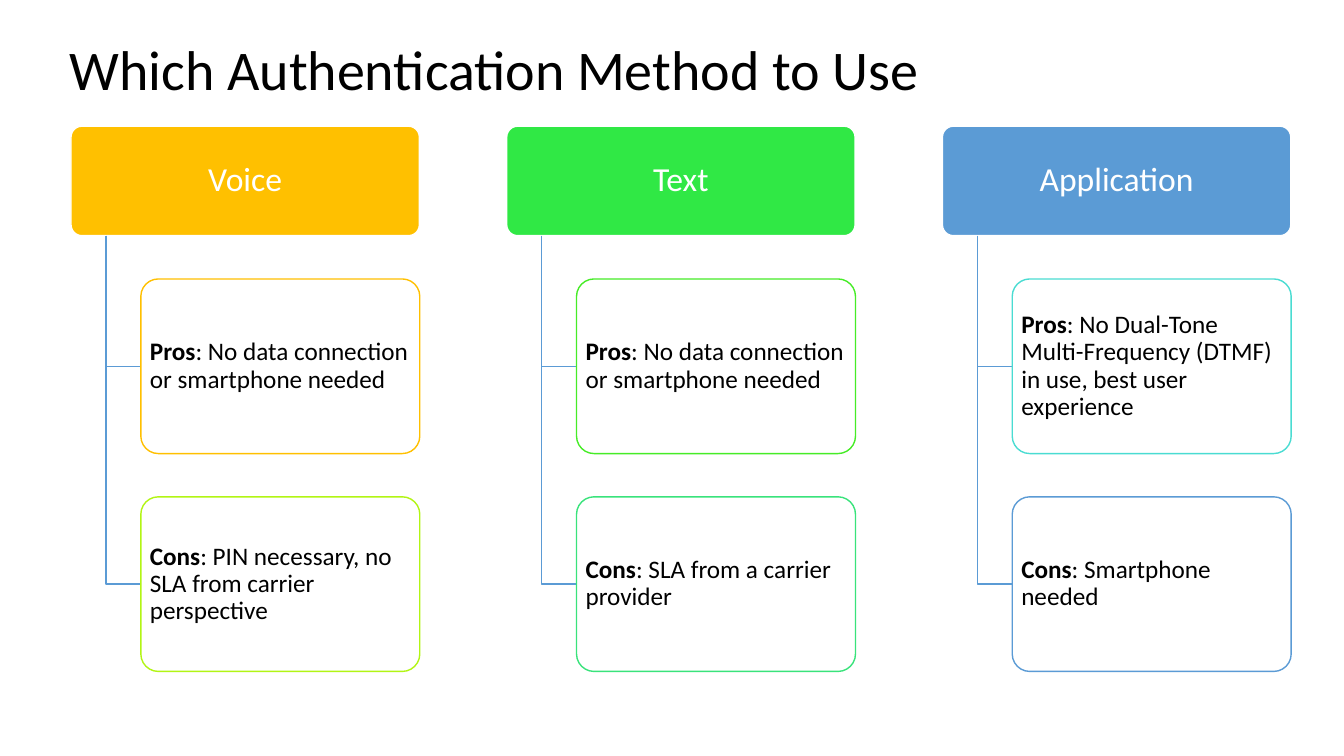
"""Build a slide comparing voice, text and application authentication."""
from dataclasses import dataclass

from lxml import etree
from pptx import Presentation
from pptx.dml.color import RGBColor
from pptx.enum.shapes import MSO_SHAPE
from pptx.enum.text import MSO_ANCHOR, PP_ALIGN
from pptx.oxml.ns import qn
from pptx.shapes.autoshape import Shape
from pptx.slide import Slide
from pptx.text.text import TextFrame, _Run
from pptx.util import Cm, Pt

ROUNDED = MSO_SHAPE.ROUNDED_RECTANGLE
MIDDLE = MSO_ANCHOR.MIDDLE
LEFT, CENTER = PP_ALIGN.LEFT, PP_ALIGN.CENTER

FONT = "Calibri"
WHITE, BLACK, BLUE = "FFFFFF", "000000", "5B9BD5"
COLUMN_LEFT, COLUMN_PITCH = 1.79, 10.98
HEADER_TOP, HEADER_WIDTH, HEADER_HEIGHT = 3.18, 8.78, 2.76
CARD_TOP, CARD_PITCH, CARD_WIDTH, CARD_HEIGHT = 7.03, 5.49, 7.03, 4.4
TRUNK_INDENT, CARD_INDENT = 0.88, 1.76


@dataclass
class Card:
    label: str
    detail: str
    outline: str


@dataclass
class Method:
    name: str
    fill: str
    cards: list[Card]


METHODS = [
    Method("Voice", "FFC000", [
        Card("Pros", "No data connection or smartphone needed", "FFC000"),
        Card("Cons", "PIN necessary, no SLA from carrier perspective", "B2F514"),
    ]),
    Method("Text", "30E845", [
        Card("Pros", "No data connection or smartphone needed", "46EC27"),
        Card("Cons", "SLA from a carrier provider", "39E37B"),
    ]),
    Method("Application", BLUE, [
        Card("Pros", "No Dual-Tone Multi-Frequency (DTMF) in use, best user experience", "4ADCD2"),
        Card("Cons", "Smartphone needed", BLUE),
    ]),
]


def color(value: str) -> RGBColor:
    """Turn a hex string into a colour."""
    return RGBColor.from_string(value)


def style_span(span: _Run, size: int, ink: str, bold: bool = False) -> None:
    """Set the font of one run."""
    span.font.name = FONT
    span.font.size = Pt(size)
    span.font.bold = bold
    span.font.color.rgb = color(ink)


def set_margins(frame: TextFrame, side: float, edge: float) -> None:
    """Wrap the text and set its insets in centimetres."""
    frame.word_wrap = True
    frame.margin_left = frame.margin_right = Cm(side)
    frame.margin_top = frame.margin_bottom = Cm(edge)


def add_title(page: Slide, text: str) -> None:
    """Write the slide title."""
    box = page.shapes.add_textbox(Cm(1.35), Cm(0.81), Cm(31.98), Cm(1.65))
    set_margins(box.text_frame, 0.41, 0.25)
    para = box.text_frame.paragraphs[0]
    para.text = text
    para.line_spacing = 0.9
    style_span(para.runs[0], 40, BLACK)


def add_panel(page: Slide, left: float, top: float, width: float, height: float,
              fill: str, outline: str) -> Shape:
    """Draw a rounded rectangle ready for text."""
    box = page.shapes.add_shape(ROUNDED, Cm(left), Cm(top), Cm(width), Cm(height))
    box.adjustments[0] = 0.1
    box.shadow.inherit = False
    box.fill.solid()
    box.fill.fore_color.rgb = color(fill)
    box.line.color.rgb = color(outline)
    box.line.width = Pt(1)
    box.text_frame.vertical_anchor = MIDDLE
    box.text_frame.paragraphs[0].line_spacing = 0.9
    return box


def add_header(page: Slide, method: Method, left: float) -> None:
    """Draw the filled heading of a column."""
    box = add_panel(page, left, HEADER_TOP, HEADER_WIDTH, HEADER_HEIGHT, method.fill, WHITE)
    set_margins(box.text_frame, 0.13, 0.08)
    para = box.text_frame.paragraphs[0]
    para.text = method.name
    para.alignment = CENTER
    style_span(para.runs[0], 24, WHITE)


def add_branch(page: Slide, left: float, bottom: float) -> None:
    """Draw the elbow from a heading to a card."""
    trunk = Cm(left + TRUNK_INDENT)
    builder = page.shapes.build_freeform(trunk, Cm(HEADER_TOP + HEADER_HEIGHT))
    builder.add_line_segments(
        [(trunk, Cm(bottom)), (Cm(left + CARD_INDENT), Cm(bottom))], close=False)
    elbow = builder.convert_to_shape()
    elbow.shadow.inherit = False
    elbow.fill.background()
    elbow.line.color.rgb = color(BLUE)
    elbow.line.width = Pt(1)


def add_card(page: Slide, card: Card, left: float, top: float) -> None:
    """Draw one outlined card with a bold label."""
    box = add_panel(page, left, top, CARD_WIDTH, CARD_HEIGHT, WHITE, card.outline)
    fill_color = box.fill._xPr.find(qn("a:solidFill"))[0]
    etree.SubElement(fill_color, qn("a:alpha"), val="90000")
    set_margins(box.text_frame, 0.1, 0.08)
    para = box.text_frame.paragraphs[0]
    para.alignment = LEFT
    for text, bold in ((card.label, True), (f": {card.detail}", False)):
        span = para.add_run()
        span.text = text
        style_span(span, 18, BLACK, bold)


def add_column(page: Slide, method: Method, left: float) -> None:
    """Draw a heading with its branches and cards."""
    add_header(page, method, left)
    for row, card in enumerate(method.cards):
        top = CARD_TOP + row * CARD_PITCH
        add_branch(page, left, top + CARD_HEIGHT / 2)
        add_card(page, card, left + CARD_INDENT, top)


def main() -> None:
    """Create and save the deck."""
    deck = Presentation()
    deck.slide_width, deck.slide_height = Cm(33.87), Cm(19.05)
    page = deck.slides.add_slide(deck.slide_layouts[6])
    add_title(page, "Which Authentication Method to Use")
    for index, method in enumerate(METHODS):
        add_column(page, method, COLUMN_LEFT + index * COLUMN_PITCH)
    deck.save("out.pptx")


if __name__ == "__main__":
    main()
